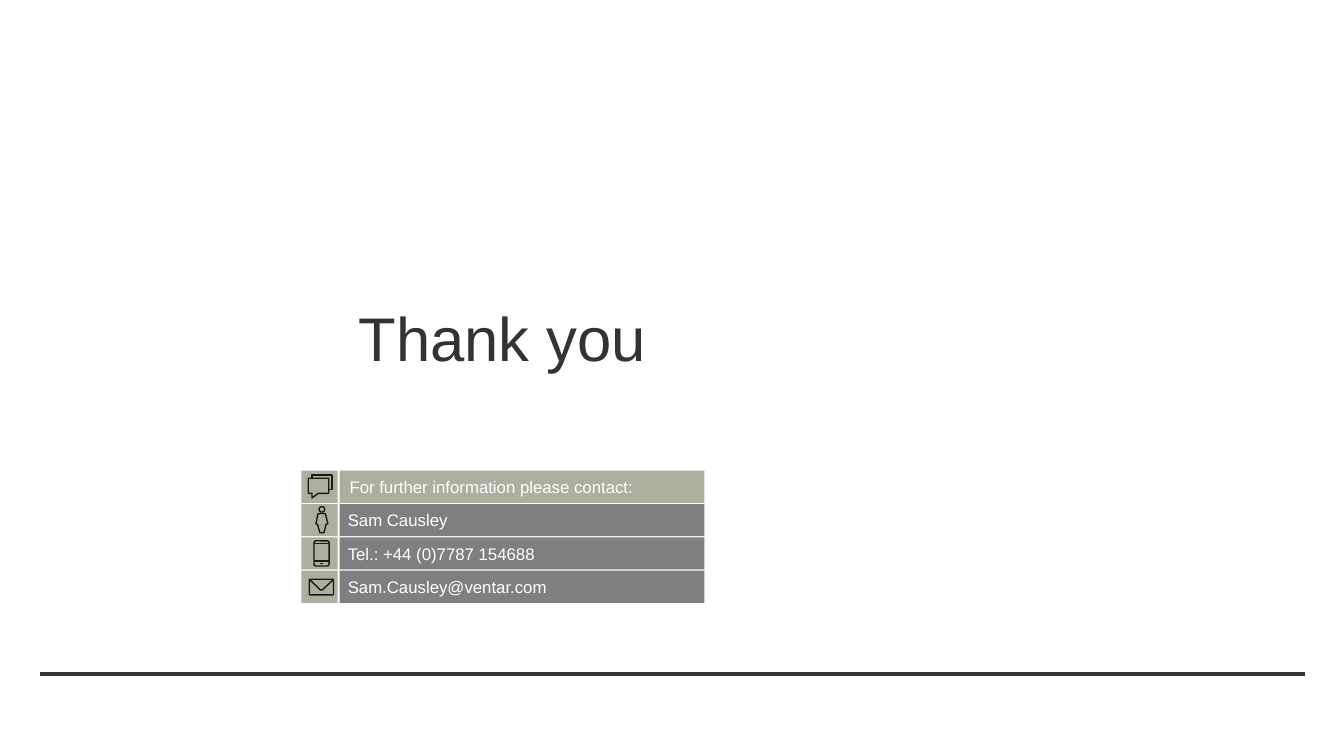
from dataclasses import dataclass

from lxml.etree import SubElement
from pptx import Presentation
from pptx.dml.color import RGBColor
from pptx.enum.shapes import MSO_CONNECTOR, MSO_SHAPE
from pptx.enum.text import MSO_ANCHOR, PP_ALIGN
from pptx.oxml.ns import qn
from pptx.util import Pt


@dataclass(frozen=True)
class Theme:
    font: str = "Arial"
    title_size: float = 44
    body_size: float = 12
    dark: str = "333333"
    grey: str = "7F7F7F"
    sage: str = "AEAE9F"
    white: str = "FFFFFF"
    ink: str = "1A1A1A"
    icon_line: float = 1


THEME = Theme()
BADGE_LEFT, BADGE_WIDTH = 215.3, 25.9
BAR_LEFT, BAR_WIDTH = 242.6, 260.6
ROW_TOP, ROW_PITCH, ROW_HEIGHT = 336.2, 23.8, 23


def rgb(value):
    return RGBColor.from_string(value)


def set_text(sp, text, size=THEME.body_size, color=THEME.white,
             align=PP_ALIGN.LEFT, insets=(7.2, 3.6, 7.2, 3.6)):
    tf = sp.text_frame
    tf.word_wrap = True
    tf.vertical_anchor = MSO_ANCHOR.MIDDLE
    tf.margin_left, tf.margin_top, tf.margin_right, tf.margin_bottom = map(Pt, insets)
    p = tf.paragraphs[0]
    p.alignment = align
    r = p.add_run()
    r.text = text
    r.font.name, r.font.size = THEME.font, Pt(size)
    r.font.color.rgb = rgb(color)


def add_block(s, left, top, width, height, fill):
    sp = s.shapes.add_shape(MSO_SHAPE.RECTANGLE, Pt(left), Pt(top), Pt(width), Pt(height))
    sp.shadow.inherit = False
    sp.fill.solid()
    sp.fill.fore_color.rgb = rgb(fill)
    sp.line.fill.background()
    return sp


def add_line(s, start, end, color, width):
    line = s.shapes.add_connector(MSO_CONNECTOR.STRAIGHT, *map(Pt, (*start, *end)))
    SubElement(line._element.spPr, qn("a:effectLst"))
    line.line.color.rgb = rgb(color)
    line.line.width = Pt(width)


class IconPen:
    """Draws thin outlines in points from the top left corner of a badge."""

    def __init__(self, s, left, top):
        self.s, self.left, self.top = s, left, top

    def at(self, x, y):
        return self.left + x, self.top + y

    def ink(self, sp):
        sp.shadow.inherit = False
        sp.fill.background()
        sp.line.color.rgb = rgb(THEME.ink)
        sp.line.width = Pt(THEME.icon_line)
        return sp

    def shape(self, kind, x, y, width, height):
        box = (*self.at(x, y), width, height)
        return self.ink(self.s.shapes.add_shape(kind, *map(Pt, box)))

    def outline(self, points, close=False):
        first, *rest = [tuple(map(Pt, self.at(*point))) for point in points]
        builder = self.s.shapes.build_freeform(*first)
        builder.add_line_segments(rest, close=close)
        self.ink(builder.convert_to_shape())

    def line(self, x1, x2, y):
        add_line(self.s, self.at(x1, y), self.at(x2, y), THEME.ink, THEME.icon_line)


def draw_speech(pen):
    pen.outline([(7.6, 5.4), (7.6, 3), (22, 3), (22, 13.4), (19.5, 13.4)])
    pen.outline([(4.9, 5.4), (19.5, 5.4), (19.5, 16.2), (12, 16.2),
                 (7.6, 19.5), (7.6, 16.2), (4.9, 16.2)], close=True)


def draw_person(pen):
    pen.shape(MSO_SHAPE.OVAL, 12.6, 1.9, 4, 3.9)
    pen.outline([(11.9, 7), (13.3, 6.8), (15.9, 6.8), (17.2, 7), (18.9, 14.2),
                 (17.6, 14.6), (16.2, 20.5), (13.2, 20.5), (11.6, 14.6),
                 (10.4, 14.2)], close=True)


def draw_phone(pen):
    body = pen.shape(MSO_SHAPE.ROUNDED_RECTANGLE, 9, 2.5, 10.8, 18)
    body.adjustments[0] = 0.13
    pen.line(9, 19.8, 4.6)
    pen.line(9, 19.8, 16.9)
    pen.line(13.2, 15.7, 18.7)


def draw_envelope(pen):
    body = pen.shape(MSO_SHAPE.ROUNDED_RECTANGLE, 5.7, 6.2, 17.3, 11.1)
    body.adjustments[0] = 0.05
    pen.outline([(6.3, 6.8), (13.6, 13.8), (15, 13.8), (22.4, 6.8)])


def add_contact_row(s, index, text, draw_icon, fill, insets):
    top = ROW_TOP + index * ROW_PITCH
    bar = add_block(s, BAR_LEFT, top, BAR_WIDTH, ROW_HEIGHT, fill)
    set_text(bar, text, insets=insets)
    add_block(s, BADGE_LEFT, top, BADGE_WIDTH, ROW_HEIGHT, THEME.sage)
    draw_icon(IconPen(s, BADGE_LEFT, top))


def main():
    prs = Presentation()
    prs.slide_width, prs.slide_height = Pt(960), Pt(540)
    s = prs.slides.add_slide(prs.slide_layouts[6])

    add_line(s, (28.4, 481.7), (932, 481.7), THEME.dark, 3)
    title = s.shapes.add_textbox(Pt(215.3), Pt(193), Pt(287.3), Pt(95.8))
    set_text(title, "Thank you", size=THEME.title_size, color=THEME.dark,
             align=PP_ALIGN.CENTER, insets=(23.8,) * 4)

    heading = (THEME.sage, (7.2, 3.6, 7.2, 3.6))
    detail = (THEME.grey, (5.8, 3.6, 8.6, 3.6))
    rows = [
        ("For further information please contact:", draw_speech, *heading),
        ("Sam Causley", draw_person, *detail),
        ("Tel.: +44 (0)7787 154688", draw_phone, *detail),
        ("Sam.Causley@ventar.com", draw_envelope, *detail),
    ]
    for index, row in enumerate(rows):
        add_contact_row(s, index, *row)

    prs.save("out.pptx")


if __name__ == "__main__":
    main()
